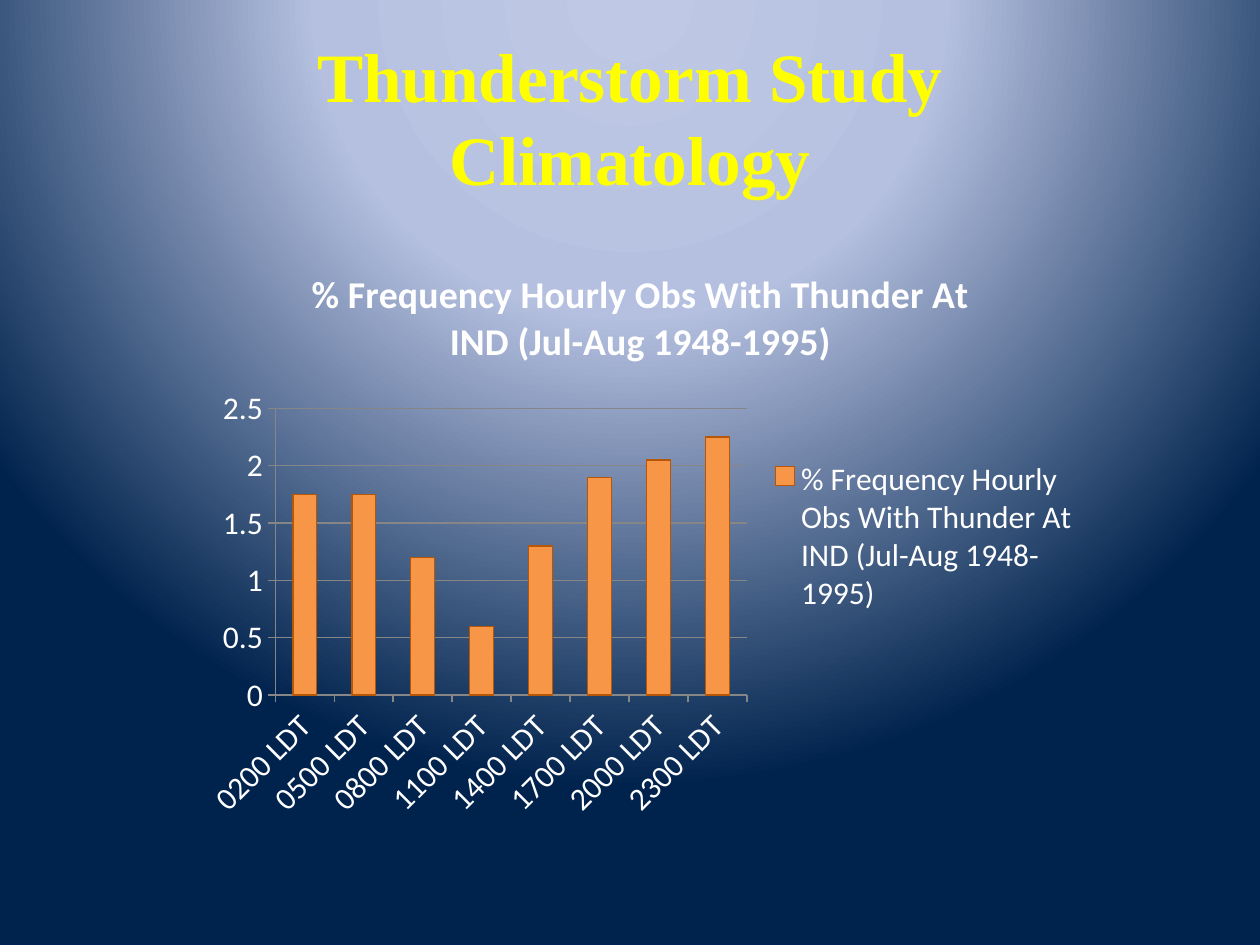
from lxml.etree import SubElement
from pptx import Presentation
from pptx.chart.data import CategoryChartData
from pptx.dml.color import RGBColor
from pptx.enum.chart import XL_CHART_TYPE, XL_LEGEND_POSITION, XL_TICK_MARK
from pptx.enum.text import MSO_ANCHOR, PP_ALIGN
from pptx.oxml.ns import qn
from pptx.util import Inches, Pt

HUES = {"glow": "BFC9E5", "haze": "B5C0E0", "navy": "00234D", "title": "FFFF00",
        "text": "FFFFFF", "bar": "F79646", "edge": "B65708", "grid": "868686"}
THUNDER = {"0200": 1.75, "0500": 1.75, "0800": 1.2, "1100": 0.6,
           "1400": 1.3, "1700": 1.9, "2000": 2.05, "2300": 2.25}
LABEL = "% Frequency Hourly Obs With Thunder At IND (Jul-Aug 1948-1995)"


def style(font, face, size, hue, bold=False):
    font.name, font.size, font.bold = face, Pt(size), bold
    font.color.rgb = RGBColor.from_string(HUES[hue])


def draw(line, hue, width=0.75):
    line.color.rgb = RGBColor.from_string(HUES[hue])
    line.width = Pt(width)


deck = Presentation()
deck.slide_width, deck.slide_height = Inches(10), Inches(7.5)
slide = deck.slides.add_slide(deck.slide_layouts[5])

# Circular glow centred above the slide
slide.background.fill.gradient()
grad = slide.element.find(".//" + qn("a:gradFill"))
for part in list(grad):
    grad.remove(part)
stops = SubElement(grad, qn("a:gsLst"))
for share, hue in ((0, "glow"), (40, "haze"), (100, "navy")):
    stop = SubElement(stops, qn("a:gs"), pos=str(share * 1000))
    SubElement(stop, qn("a:srgbClr"), val=HUES[hue])
ring = SubElement(grad, qn("a:path"), path="circle")
SubElement(ring, qn("a:fillToRect"), l="50000", t="-80000", r="50000", b="180000")

# Title
title = slide.shapes.title
title.left, title.top = Inches(0.5), Inches(0.3)
title.width, title.height = Inches(9), Inches(1.25)
frame = title.text_frame
frame.vertical_anchor = MSO_ANCHOR.MIDDLE
para = frame.paragraphs[0]
para.alignment = PP_ALIGN.CENTER
for row, words in enumerate(("Thunderstorm Study", "Climatology")):
    if row:
        para.add_line_break()
    run = para.add_run()
    run.text = words
    style(run.font, "Times New Roman", 39.6, "title", True)

# Column chart
data = CategoryChartData()
data.categories = [f"{hour} LDT" for hour in THUNDER]
data.add_series(LABEL, THUNDER.values())
chart = slide.shapes.add_chart(
    XL_CHART_TYPE.COLUMN_CLUSTERED, Inches(1.5), Inches(1.92),
    Inches(7.17), Inches(4.67), data).chart
style(chart.font, "Calibri", 18, "text")

chart.has_title = True
run = chart.chart_title.text_frame.paragraphs[0].add_run()
run.text = LABEL
style(run.font, "Calibri", 21.6, "text", True)
chart.chart_title.include_in_layout = False

chart.has_legend = True
chart.legend.position = XL_LEGEND_POSITION.RIGHT
chart.legend.include_in_layout = False

for axis in (chart.category_axis, chart.value_axis):
    axis.major_tick_mark = XL_TICK_MARK.OUTSIDE
    axis.minor_tick_mark = XL_TICK_MARK.NONE
    draw(axis.format.line, "grid")
chart.value_axis.has_major_gridlines = True
draw(chart.value_axis.major_gridlines.format.line, "grid")

plot = chart.plots[0]
plot.gap_width = 150
plot.vary_by_categories = False
bars = plot.series[0].format
bars.fill.solid()
bars.fill.fore_color.rgb = RGBColor.from_string(HUES["bar"])
draw(bars.line, "edge")

deck.save("out.pptx")
